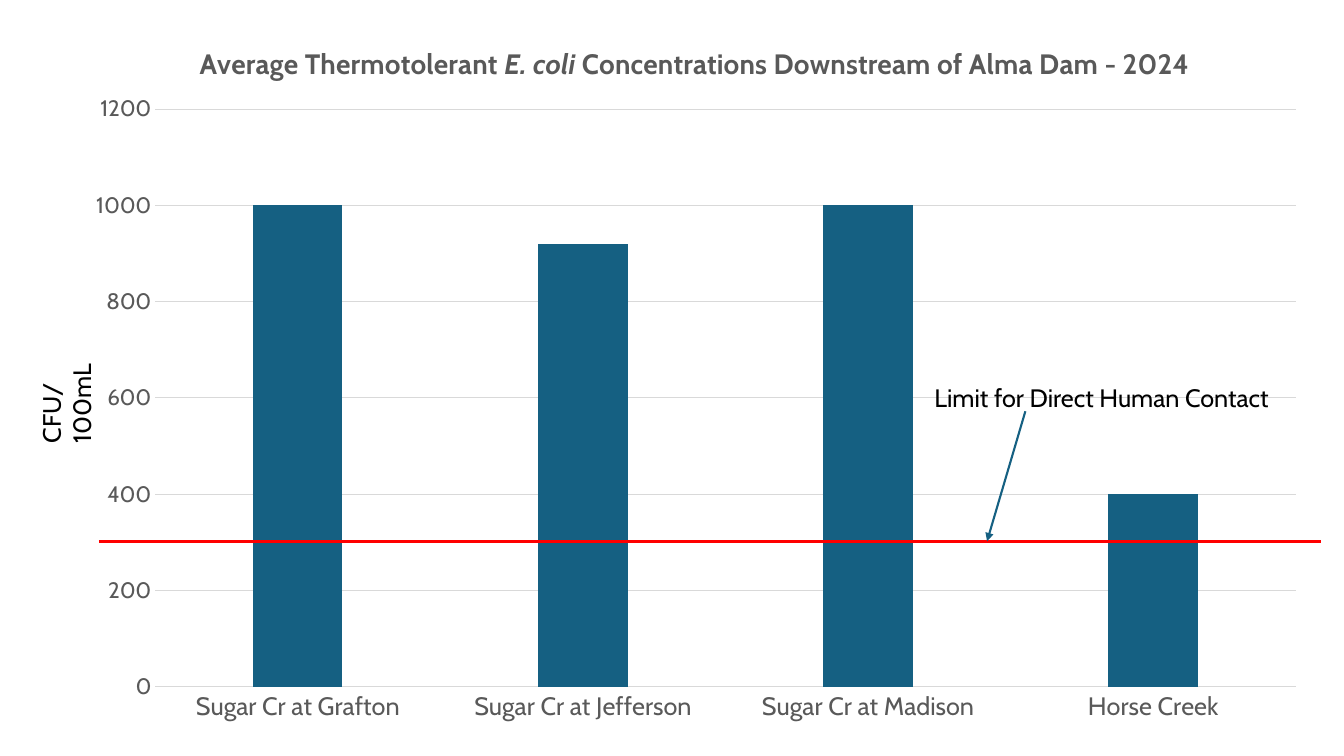
from dataclasses import dataclass

from lxml.etree import SubElement
from pptx import Presentation
from pptx.chart.data import CategoryChartData
from pptx.dml.color import RGBColor as Rgb
from pptx.enum.chart import XL_CHART_TYPE as ChartType, XL_TICK_MARK as Tick
from pptx.enum.shapes import MSO_CONNECTOR as Connector
from pptx.enum.text import MSO_AUTO_SIZE as AutoSize
from pptx.oxml import parse_xml
from pptx.oxml.ns import nsdecls, qn
from pptx.util import Emu, Pt


@dataclass(frozen=True)
class Theme:
    font: str = "Cabin"
    ink: Rgb = Rgb(0, 0, 0)
    muted: Rgb = Rgb(0x59, 0x59, 0x59)
    grid: Rgb = Rgb(0xD9, 0xD9, 0xD9)
    bar: Rgb = Rgb(0x15, 0x60, 0x82)
    limit: Rgb = Rgb(0xFF, 0, 0)
    title_size: int = 20
    label_size: int = 18
    value_size: int = 16
    base_size: int = 10


THEME = Theme()
AVERAGES = {
    "Sugar Cr at Grafton": 1000,
    "Sugar Cr at Jefferson": 920,
    "Sugar Cr at Madison": 1000,
    "Horse Creek": 400,
}
TITLE_RUNS = [
    ("Average Thermotolerant ", False),
    ("E. coli", True),
    (" Concentrations Downstream of Alma Dam - 2024", False),
]


def px(length):
    """100 px make an inch."""
    return Emu(length * 9144)


def set_font(font, size, color):
    font.name = THEME.font
    font.size = Pt(size)
    font.color.rgb = color


def set_line(line, color, width):
    line.color.rgb = color
    line.width = Pt(width)


def place(chart_part, **fractions):
    """Fix the title or plot area at fractions of the chart's size."""
    layout = chart_part.find(qn("c:layout"))
    if layout is None:
        layout = parse_xml(f"<c:layout {nsdecls('c')}/>")
        chart_part.insert(1 if chart_part.find(qn("c:tx")) is not None else 0, layout)
    manual = SubElement(layout, qn("c:manualLayout"))
    if "w" in fractions:
        SubElement(manual, qn("c:layoutTarget")).set("val", "inner")
    for mode in ("xMode", "yMode"):
        SubElement(manual, qn(f"c:{mode}")).set("val", "edge")
    for name, fraction in fractions.items():
        SubElement(manual, qn(f"c:{name}")).set("val", str(fraction))


def style_axis(axis, size):
    axis.major_tick_mark = axis.minor_tick_mark = Tick.NONE
    set_font(axis.tick_labels.font, size, THEME.muted)


def add_title(chart):
    chart.has_title = True
    heading = chart.chart_title.text_frame.paragraphs[0]
    for words, italic in TITLE_RUNS:
        run = heading.add_run()
        run.text = words
        set_font(run.font, THEME.title_size, THEME.muted)
        run.font.bold = True
        run.font.italic = italic
    place(chart.chart_title._element, x=0.1, y=0.035)


def add_concentrations(slide, left, top, width, height):
    averages = CategoryChartData()
    averages.categories = list(AVERAGES)
    averages.add_series("Series 1", list(AVERAGES.values()))
    chart = slide.shapes.add_chart(
        ChartType.COLUMN_CLUSTERED, px(left), px(top), px(width), px(height), averages
    ).chart
    set_font(chart.font, THEME.base_size, THEME.ink)
    chart.has_legend = False
    add_title(chart)

    # Bars
    bars = chart.plots[0]
    bars.gap_width, bars.overlap, bars.vary_by_categories = 219, -27, False
    fill = bars.series[0].format.fill
    fill.solid()
    fill.fore_color.rgb = THEME.bar

    # Axes
    sites, levels = chart.category_axis, chart.value_axis
    style_axis(sites, THEME.label_size)
    set_line(sites.format.line, THEME.grid, 0.75)
    style_axis(levels, THEME.value_size)
    levels.format.line.fill.background()
    levels.minimum_scale, levels.maximum_scale, levels.major_unit = 0, 1200, 200
    set_line(levels.major_gridlines.format.line, THEME.grid, 0.75)
    place(chart._chartSpace.chart.plotArea, x=0.067, y=0.128, w=0.913, h=0.804)


def add_label(slide, words, left, top, width, height, rotation=0):
    label = slide.shapes.add_textbox(px(left), px(top), px(width), px(height))
    label.rotation = rotation
    frame = label.text_frame
    frame.word_wrap = False
    frame.auto_size = AutoSize.SHAPE_TO_FIT_TEXT
    frame.text = words
    set_font(frame.paragraphs[0].font, THEME.label_size, THEME.ink)


def add_line(slide, start, end, color, width, arrow=False):
    ends = [px(length) for length in (*start, *end)]
    connector = slide.shapes.add_connector(Connector.STRAIGHT, *ends)
    set_line(connector.line, color, width)
    properties = connector._element.spPr
    if arrow:
        SubElement(properties.find(qn("a:ln")), qn("a:tailEnd")).set("type", "triangle")
    SubElement(properties, qn("a:effectLst"))


def main():
    deck = Presentation()
    deck.slide_width, deck.slide_height = px(1333), px(750)
    slide = deck.slides.add_slide(deck.slide_layouts[6])

    # Chart and its unit
    add_concentrations(slide, 71, 17, 1239, 713)
    add_label(slide, "CFU/100mL", -25, 354, 151, 40, rotation=270)

    # Contact limit with its callout
    limit_y = 537
    add_line(slide, (98, limit_y), (1310, limit_y), THEME.limit, 2)
    add_label(slide, "Limit for Direct Human Contact", 917, 374, 360, 40)
    add_line(slide, (1017, 408), (979, limit_y), THEME.bar, 1.5, arrow=True)

    deck.save("out.pptx")


if __name__ == "__main__":
    main()
